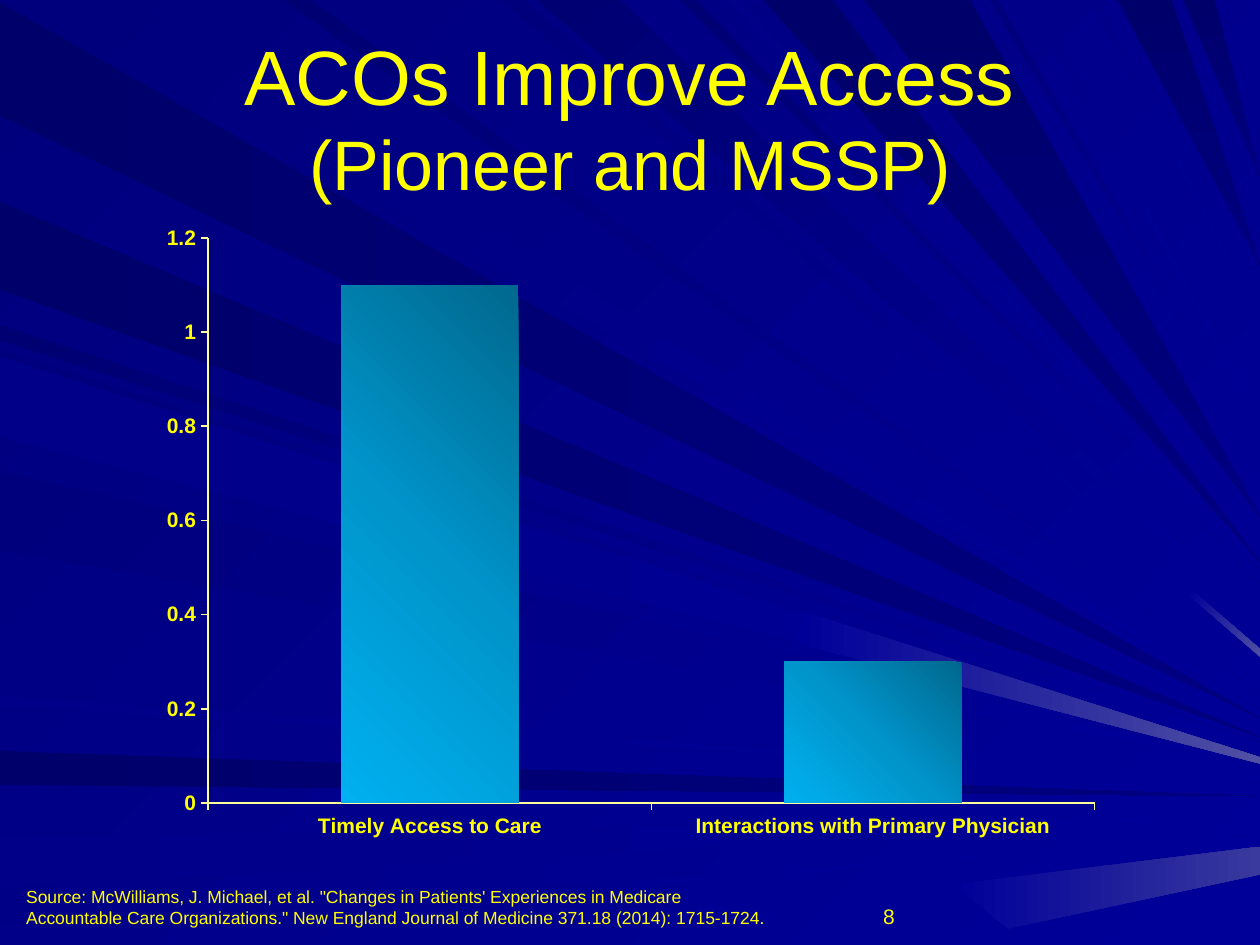
from copy import deepcopy

from pptx import Presentation
from pptx.chart.data import CategoryChartData
from pptx.dml.color import RGBColor
from pptx.enum.chart import XL_CHART_TYPE, XL_TICK_MARK
from pptx.enum.text import MSO_ANCHOR, MSO_AUTO_SIZE, PP_ALIGN
from pptx.oxml.ns import qn
from pptx.util import Inches, Pt

YELLOW = RGBColor(0xFF, 0xFF, 0x00)
AXIS_YELLOW = RGBColor(0xFF, 0xFF, 0x99)
DEEP = RGBColor(0x00, 0x00, 0x6B)
NAVY = RGBColor(0x00, 0x00, 0x73)
MIDDLE = RGBColor(0x00, 0x00, 0x7C)
DARK = RGBColor(0x00, 0x00, 0x80)
PALE = RGBColor(0x00, 0x00, 0x88)
BLUE = RGBColor(0x00, 0x00, 0x99)
GLOW = RGBColor(0x50, 0x50, 0xA4)
HAZE = RGBColor(0x39, 0x39, 0x9E)
BAR_COLORS = [RGBColor(0x00, 0x68, 0x8E), RGBColor(0x00, 0x94, 0xCA),
              RGBColor(0x00, 0xB0, 0xF0)]
FONT = "Arial"
WIDTH, HEIGHT = 10, 7.5

# Content
TITLE_LINES = [("ACOs Improve Access", 44), ("(Pioneer and MSSP)", 40)]
ACCESS_GAINS = {"Timely Access to Care": 1.1,
                "Interactions with Primary Physician": 0.3}
PAGE_NUMBER = "8"
SOURCE = ("Source: McWilliams, J. Michael, et al. \"Changes in Patients' Experiences "
          "in Medicare Accountable Care Organizations.\" New England Journal of "
          "Medicine 371.18 (2014): 1715-1724.")

# Rays narrow to a point on the right edge: (start, start width, end height)
LEFT_RAYS = [
    ([DEEP, DARK], 0, [(0.02, 0.9, 5.7), (1.6, 0.7, 5.85), (5.96, 0.27, 6.32)]),
    ([NAVY, BLUE], 45, [(2.58, 0.12, 5.89)]),
    ([MIDDLE, BLUE], 45, [(2.78, 0.64, 6), (3.74, 0.63, 6.06)]),
    ([PALE, BLUE], 0, [(5.52, 0.08, 6.22), (6.65, 0.4, 6.47),
                       (7.35, 0.15, 6.62), (2.83, 0.64, 6.04)]),
]
TOP_RAYS = [
    ([DEEP, DARK], 90, [(6.06, 0.55, 4.46), (6.86, 0.84, 4.1),
                        (8.87, 0.43, 2.1), (9.39, 0.25, 1.4)]),
    ([NAVY, BLUE], 45, [(2.25, 0.22, 5.5), (4.26, 0.66, 4.93), (5.4, 0.12, 4.63)]),
    ([MIDDLE, BLUE], 45, [(0.26, 0.75, 5.63), (3.98, 0.18, 5.18), (7.85, 0.07, 3.57)]),
    ([PALE, BLUE], 45, [(5.77, 0.11, 4.54), (8.15, 0.09, 3.36), (8.65, 0.07, 2.54)]),
]
# Bright ends of rays near the right edge
GLINTS = [
    ([BLUE, HAZE], 0, [(7.56, 7.02), (10, 6.72), (10, 6.94), (8, 7.37)]),
    ([BLUE, GLOW], 0, [(6.37, 4.85), (10, 6.01), (10, 6.06), (6.33, 5.11)]),
    ([BLUE, GLOW], 45, [(9.47, 4.69), (10, 5.15), (10, 5.21), (9.44, 4.73)]),
]


def paint(fill, colors, angle, owner):
    """Fill with an even gradient at a clockwise angle."""
    fill.gradient()
    fill.gradient_angle = (360 - angle) % 360
    stop_list = next(owner.iter(qn("a:gsLst")))
    for _ in colors[2:]:
        stop_list.append(deepcopy(stop_list[-1]))
    for i, (stop, color) in enumerate(zip(fill.gradient_stops, colors)):
        stop.position = i / (len(colors) - 1)
        stop.color.rgb = color


def style(font, size, bold=None):
    font.name, font.size, font.bold = FONT, Pt(size), bold
    font.color.rgb = YELLOW


def add_ray(slide, colors, angle, corners):
    points = [(Inches(x), Inches(y)) for x, y in corners]
    builder = slide.shapes.build_freeform(*points[0])
    builder.add_line_segments(points[1:], close=True)
    ray = builder.convert_to_shape()
    ray.shadow.inherit = False
    ray.line.fill.background()
    paint(ray.fill, colors, angle, ray._element)
    return ray


def add_rays(slide):
    rays = []
    for colors, angle, group in LEFT_RAYS:
        for start, width, end in group:
            corners = [(0, start), (WIDTH, end), (0, start + width)]
            rays.append(add_ray(slide, colors, angle, corners))
    for colors, angle, group in TOP_RAYS:
        for start, width, end in group:
            corners = [(start, 0), (start + width, 0), (WIDTH, end)]
            rays.append(add_ray(slide, colors, angle, corners))
    rays += [add_ray(slide, *glint) for glint in GLINTS]
    # Group them behind the title
    ray_group = slide.shapes.add_group_shape(rays)
    slide.shapes._spTree.insert(2, ray_group._element)


def add_title(slide):
    title = slide.shapes.title
    title.left, title.top = Inches(0.5), Inches(0.3)
    title.width, title.height = Inches(9), Inches(1.25)
    title.text_frame.auto_size = MSO_AUTO_SIZE.NONE
    title.text_frame.vertical_anchor = MSO_ANCHOR.MIDDLE
    heading = title.text_frame.paragraphs[0]
    heading.alignment = PP_ALIGN.CENTER
    for i, (line, size) in enumerate(TITLE_LINES):
        if i:
            heading.add_line_break()
        run = heading.add_run()
        run.text = line
        style(run.font, size)


def add_note(slide, box, text, size, align, anchor):
    note = slide.shapes.add_textbox(*map(Inches, box))
    frame = note.text_frame
    frame.word_wrap = True
    frame.vertical_anchor = anchor
    paragraph = frame.paragraphs[0]
    paragraph.text = text
    paragraph.alignment = align
    style(paragraph.font, size)


def add_access_chart(slide):
    data = CategoryChartData()
    data.categories = list(ACCESS_GAINS)
    data.add_series("Series 1", list(ACCESS_GAINS.values()))
    chart = slide.shapes.add_chart(
        XL_CHART_TYPE.COLUMN_CLUSTERED, Inches(1.17), Inches(1.7),
        Inches(7.67), Inches(5.05), data).chart
    style(chart.font, 10)
    chart.has_legend = chart.has_title = False
    for axis in (chart.category_axis, chart.value_axis):
        axis.has_major_gridlines = False
        axis.major_tick_mark = XL_TICK_MARK.OUTSIDE
        axis.format.line.color.rgb = AXIS_YELLOW
        axis.format.line.width = Pt(1)
        style(axis.tick_labels.font, 12, True)
    chart.value_axis.minimum_scale = 0
    chart.value_axis.maximum_scale = 1.2
    chart.value_axis.major_unit = 0.2
    plot = chart.plots[0]
    plot.gap_width = 150
    plot.vary_by_categories = False
    series = plot.series[0]
    paint(series.format.fill, BAR_COLORS, 135, series._element)


def main():
    prs = Presentation()
    prs.slide_width, prs.slide_height = Inches(WIDTH), Inches(HEIGHT)
    slide = prs.slides.add_slide(prs.slide_layouts[5])
    paint(slide.background.fill, [MIDDLE, BLUE], 45, slide._element)
    add_rays(slide)
    add_title(slide)
    add_access_chart(slide)

    # Page number and source
    add_note(slide, (4.87, 6.92, 2.33, 0.5), PAGE_NUMBER, 12,
             PP_ALIGN.RIGHT, MSO_ANCHOR.BOTTOM)
    add_note(slide, (0.11, 6.98, 6.14, 0.44), SOURCE, 10,
             PP_ALIGN.LEFT, MSO_ANCHOR.TOP)
    prs.save("out.pptx")


if __name__ == "__main__":
    main()
